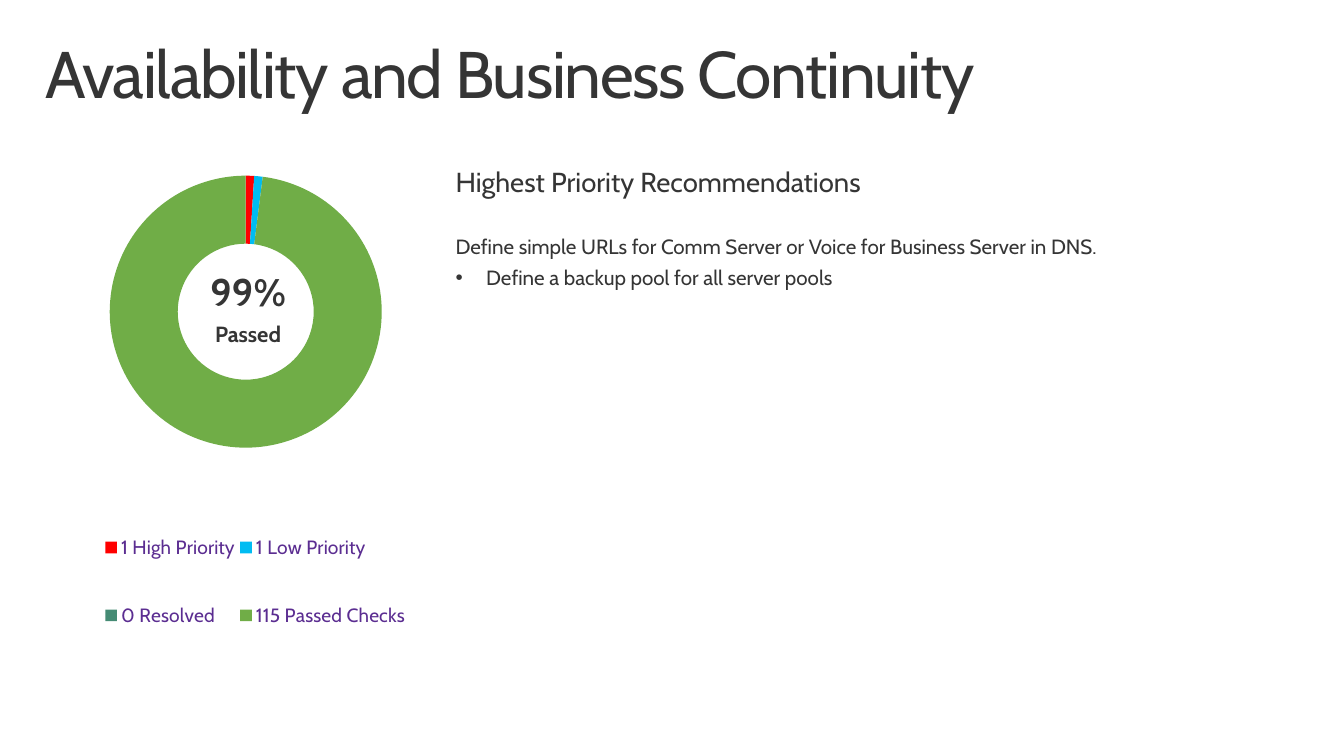
from lxml.etree import SubElement
from pptx import Presentation
from pptx.chart.data import CategoryChartData
from pptx.dml.color import RGBColor
from pptx.enum.chart import XL_CHART_TYPE as ChartType, XL_LEGEND_POSITION as LegendPosition
from pptx.enum.text import MSO_ANCHOR as Anchor, MSO_AUTO_SIZE as AutoSize, PP_ALIGN as Align
from pptx.oxml import parse_xml
from pptx.oxml.ns import nsdecls, qn
from pptx.util import Pt

# Content
FONT, INK, LEGEND_INK = "Cabin", "353535", "5B2D91"
TITLE = "Availability and Business Continuity"
CHECKS = [  # category, value, colour
    ("1 High Priority", 1, "FF0000"),
    ("", None, "001D49"),
    ("1 Low Priority", 1, "00BCF2"),
    ("", None, "A3008F"),
    ("0 Resolved", 0, "458B74"),
    ("", None, "D1D1D1"),
    ("115 Passed Checks", 98, "70AD47"),
]
HOLE_SIZE = 68
# Text lines: text, size, bold, space after, bullet
TITLE_LINES = [(TITLE, 48, False, 0, False)]
SCORE_LINES = [("99%", 28, True, 6, False), ("Passed", 16, True, 6, False)]
RECOMMENDATION_LINES = [
    ("Highest Priority Recommendations", 20, False, 28, False),
    ("Define simple URLs for Comm Server or Voice for Business Server in DNS.", 15, False, 6, False),
    ("Define a backup pool for all server pools", 15, False, 6, True),
]

# Layout in px, 100 px to the inch
PX = 9144
SLIDE_SIZE = (1360, 765)
TITLE_BOX = (30, 32, 1300, 100)
CHART_BOX = (0, 110, 483, 587)
SCORE_BOX = (180, 261, 142, 319)
RECOMMENDATION_BOX = (441, 155, 841, 125)
BULLET_INDENT = 31
# Shares of the chart: x, y, width, height
PLOT_AREA = (0.23, 0.07, 0.57, 0.56)
LEGEND_AREA = (0.21, 0.66, 0.65, 0.31)


def color(value):
    return RGBColor.from_string(value)


def emu(box):
    return [length * PX for length in box]


def apply(target, formats):
    for name, value in formats.items():
        setattr(target, name, value)


def place(shape, box):
    apply(shape, dict(zip(("left", "top", "width", "height"), emu(box))))


def set_bullet(paragraph, bullet):
    properties = paragraph._p.get_or_add_pPr()
    indent = BULLET_INDENT * PX if bullet else 0
    properties.set("marL", str(indent))
    properties.set("indent", str(-indent))
    if bullet:
        SubElement(properties, qn("a:buChar")).set("char", "•")
    else:
        SubElement(properties, qn("a:buNone"))


def write(shape, lines, inset, align=Align.LEFT, auto_size=AutoSize.NONE, tracking=0):
    frame = shape.text_frame
    side, edge = emu(inset)
    apply(frame, {
        "word_wrap": True, "auto_size": auto_size, "vertical_anchor": Anchor.TOP,
        "margin_left": side, "margin_right": side, "margin_top": edge, "margin_bottom": edge,
    })
    for index, (text, size, bold, space_after, bullet) in enumerate(lines):
        paragraph = frame.add_paragraph() if index else frame.paragraphs[0]
        apply(paragraph, {"alignment": align, "line_spacing": 0.9,
                          "space_before": Pt(0), "space_after": Pt(space_after)})
        set_bullet(paragraph, bullet)
        run = paragraph.add_run()
        run.text = text
        apply(run.font, {"name": FONT, "size": Pt(size), "bold": bold})
        run.font.color.rgb = color(INK)
        if tracking:
            run._r.get_or_add_rPr().set("spc", str(tracking))


def manual_layout(area, inner=False):
    parts = [("layoutTarget", "inner")] if inner else []
    parts += [("xMode", "edge"), ("yMode", "edge"), *zip("xywh", area)]
    body = "".join(f'<c:{tag} val="{value}"/>' for tag, value in parts)
    return parse_xml(f'<c:layout {nsdecls("c")}><c:manualLayout>{body}</c:manualLayout></c:layout>')


def add_layout(parent, layout, index):
    for old in parent.findall(qn("c:layout")):
        parent.remove(old)
    parent.insert(index, layout)


def add_checks_chart(slide):
    data = CategoryChartData()
    data.categories = [name for name, _, _ in CHECKS]
    data.add_series("Series 1", [value for _, value, _ in CHECKS])
    chart = slide.shapes.add_chart(ChartType.DOUGHNUT, *emu(CHART_BOX), data).chart
    apply(chart, {"has_title": False, "has_legend": True})
    apply(chart.font, {"name": FONT, "size": Pt(10)})
    chart.font.color.rgb = color(INK)

    # Ring
    plot = chart.plots[0]
    plot.vary_by_categories = True
    plot._element.find(qn("c:holeSize")).set("val", str(HOLE_SIZE))
    for index, (_, _, fill) in enumerate(CHECKS):
        point_format = plot.series[0].points[index].format
        point_format.fill.solid()
        point_format.fill.fore_color.rgb = color(fill)
        point_format.line.fill.background()
    add_layout(plot._element.getparent(), manual_layout(PLOT_AREA, inner=True), 0)

    # Legend without the unnamed categories
    legend = chart.legend
    apply(legend, {"position": LegendPosition.BOTTOM, "include_in_layout": False})
    apply(legend.font, {"name": FONT, "size": Pt(14)})
    legend.font.color.rgb = color(LEGEND_INK)
    unnamed = [index for index, (name, _, _) in enumerate(CHECKS) if not name]
    for position, index in enumerate(unnamed, start=1):
        legend._element.insert(position, parse_xml(
            f'<c:legendEntry {nsdecls("c")}><c:idx val="{index}"/><c:delete val="1"/></c:legendEntry>'))
    add_layout(legend._element, manual_layout(LEGEND_AREA), len(unnamed) + 1)


def main():
    presentation = Presentation()
    presentation.slide_width, presentation.slide_height = emu(SLIDE_SIZE)
    slide = presentation.slides.add_slide(presentation.slide_layouts[1])

    # Title
    title = slide.shapes.title
    place(title, TITLE_BOX)
    write(title, TITLE_LINES, inset=(16, 10), tracking=-100)

    # Chart with the score in its hole
    add_checks_chart(slide)
    score = slide.shapes.add_textbox(*emu(SCORE_BOX))
    write(score, SCORE_LINES, inset=(20, 16), align=Align.CENTER,
          auto_size=AutoSize.SHAPE_TO_FIT_TEXT)

    # Recommendations
    recommendations = slide.placeholders[1]
    place(recommendations, RECOMMENDATION_BOX)
    write(recommendations, RECOMMENDATION_LINES, inset=(20, 16))

    presentation.save("out.pptx")


if __name__ == "__main__":
    main()
